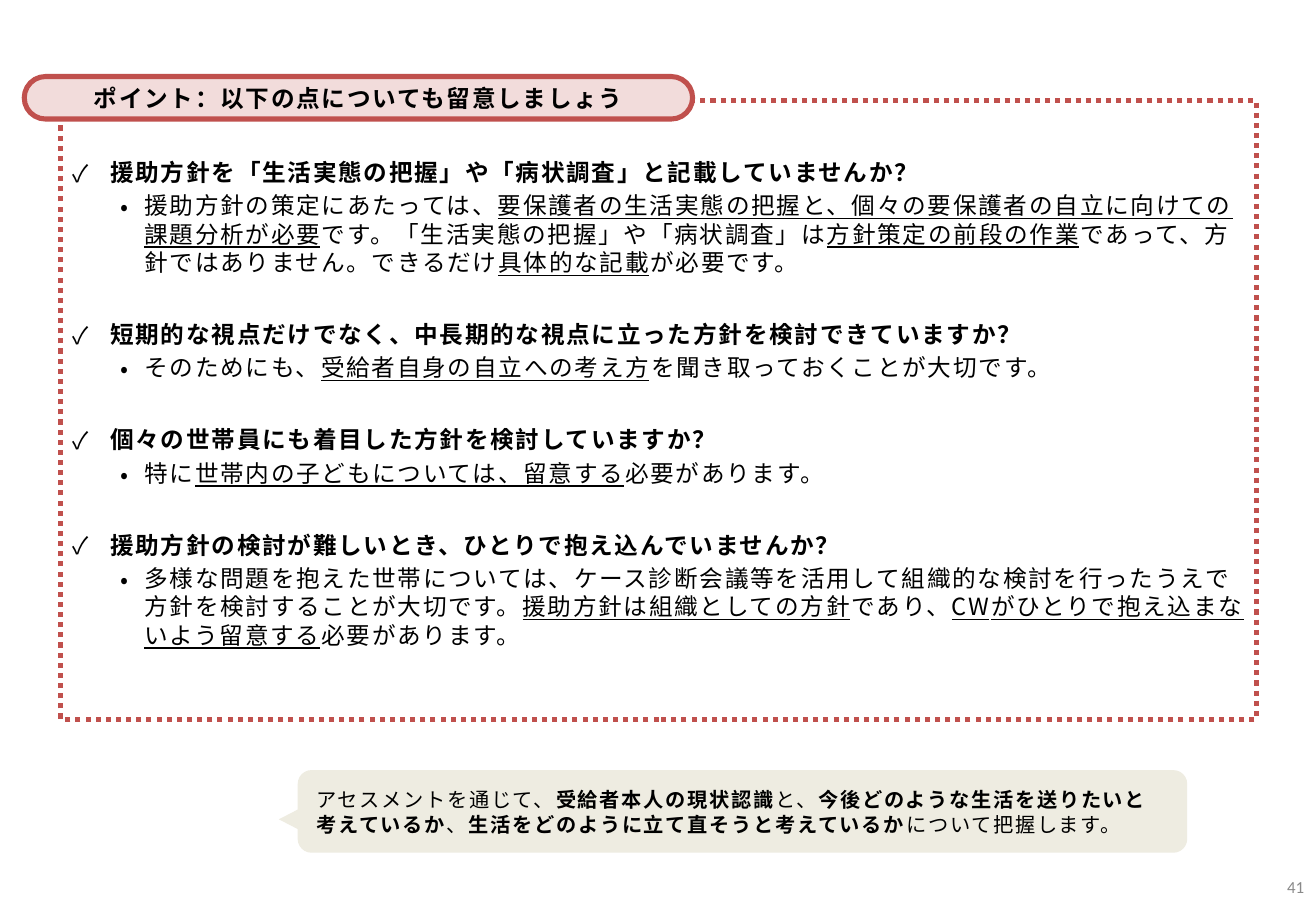
from dataclasses import dataclass

from lxml import etree
from pptx import Presentation
from pptx.dml.color import RGBColor
from pptx.enum.dml import MSO_LINE
from pptx.enum.shapes import MSO_SHAPE
from pptx.enum.text import MSO_ANCHOR, PP_ALIGN
from pptx.oxml.ns import qn
from pptx.util import Inches, Pt

RECT, ROUND, TRIANGLE = MSO_SHAPE.RECTANGLE, MSO_SHAPE.ROUNDED_RECTANGLE, MSO_SHAPE.ISOSCELES_TRIANGLE
LEFT, CENTER, RIGHT = PP_ALIGN.LEFT, PP_ALIGN.CENTER, PP_ALIGN.RIGHT
TOP, MIDDLE = MSO_ANCHOR.TOP, MSO_ANCHOR.MIDDLE
DOTTED = MSO_LINE.ROUND_DOT  # sysDot

COLORS = {"text": "000000", "red": "C0504D", "pink": "F2DCDB", "beige": "EEECE1", "gray": "898989"}
JP_FONT = "Noto Sans CJK JP"
LINE_PITCH = 16.8
POINT_GAP = LINE_PITCH + 9


@dataclass
class Point:
    question: str
    advice: str  # *marked* parts are underlined


@dataclass
class Bullet:
    char: str
    margin: float
    hanging: float


CHECK = Bullet("✓", 0.31, 0.31)
DOT = Bullet("•", 0.59, 0.2)

POINTS = [
    Point("援助方針を「生活実態の把握」や「病状調査」と記載していませんか？",
          "援助方針の策定にあたっては、*要保護者の生活実態の把握と、個々の要保護者の自立に向けての課題分析が必要*"
          "です。「生活実態の把握」や「病状調査」は*方針策定の前段の作業*であって、方針ではありません。"
          "できるだけ*具体的な記載*が必要です。"),
    Point("短期的な視点だけでなく、中長期的な視点に立った方針を検討できていますか？",
          "そのためにも、*受給者自身の自立への考え方*を聞き取っておくことが大切です。"),
    Point("個々の世帯員にも着目した方針を検討していますか？",
          "特に*世帯内の子どもについては、留意する*必要があります。"),
    Point("援助方針の検討が難しいとき、ひとりで抱え込んでいませんか？",
          "多様な問題を抱えた世帯については、ケース診断会議等を活用して組織的な検討を行ったうえで"
          "方針を検討することが大切です。*援助方針は組織としての方針*であり、"
          "*CWがひとりで抱え込まないよう留意する*必要があります。"),
]
ASSESSMENT = ("アセスメントを通じて、*受給者本人の現状認識*と、*今後どのような生活を送りたいと\n"
              "考えているか*、*生活をどのように立て直そうと考えているか*について把握します。")


def add_text(p, text: str, *, size: float = 14, color: str = "text", font: str = JP_FONT,
             bold: bool = False, mark: str = "bold", spacing: float = 1, align=LEFT,
             before: float = 0, pitch: float | None = None, bullet: Bullet | None = None) -> None:
    """Fill a paragraph; parts between asterisks get the mark format."""
    p.alignment = align
    p.space_before = Pt(before)
    if pitch:
        p.line_spacing = Pt(pitch)
    if bullet:
        pPr = p._p.get_or_add_pPr()
        pPr.set("marL", str(Inches(bullet.margin)))
        pPr.set("indent", str(-Inches(bullet.hanging)))
        etree.SubElement(pPr, qn("a:buFont")).set("typeface", font)
        etree.SubElement(pPr, qn("a:buChar")).set("char", bullet.char)
    for i, part in enumerate(text.split("*")):
        for j, line in enumerate(part.split("\n")):
            if j:
                p.add_line_break()
            r = p.add_run()
            r.text = line
            r.font.size = Pt(size)
            r.font.name = font
            r.font.color.rgb = RGBColor.from_string(COLORS[color])
            r.font.bold = bold
            if i % 2:
                setattr(r.font, mark, True)
            rPr = r._r.get_or_add_rPr()
            rPr.set("spc", str(int(spacing * 100)))
            etree.SubElement(rPr, qn("a:ea")).set("typeface", font)


def add_box(s, kind, x: float, y: float, w: float, h: float, *,
            fill: str | None = None, line: str | None = None):
    sp = s.shapes.add_shape(kind, Inches(x), Inches(y), Inches(w), Inches(h))
    sp.shadow.inherit = False
    if fill:
        sp.fill.solid()
        sp.fill.fore_color.rgb = RGBColor.from_string(COLORS[fill])
    else:
        sp.fill.background()
    if line:
        sp.line.color.rgb = RGBColor.from_string(COLORS[line])
        sp.line.width = Pt(3)
    else:
        sp.line.fill.background()
    return sp


def set_frame(sp, anchor, side: float = 0.1, edge: float = 0.05):
    tf = sp.text_frame
    tf.word_wrap = True
    tf.vertical_anchor = anchor
    tf.margin_left = tf.margin_right = Inches(side)
    tf.margin_top = tf.margin_bottom = Inches(edge)
    return tf


def add_textbox(s, x: float, y: float, w: float, h: float, anchor):
    return set_frame(s.shapes.add_textbox(Inches(x), Inches(y), Inches(w), Inches(h)), anchor)


def main() -> None:
    prs = Presentation()
    prs.slide_width, prs.slide_height = Inches(10.83), Inches(7.5)
    s = prs.slides.add_slide(prs.slide_layouts[6])

    # Page number
    tf = add_textbox(s, 10.32, 7.1, 0.51, 0.4, MIDDLE)
    add_text(tf.paragraphs[0], "41", size=10, color="gray", font="Calibri", spacing=0, align=RIGHT)

    # Assessment callout
    add_box(s, TRIANGLE, 2.29, 6.59, 0.32, 0.31, fill="beige").rotation = 270
    callout = add_box(s, ROUND, 2.45, 6.34, 7.32, 0.68, fill="beige")
    tf = set_frame(callout, MIDDLE, 0.12, 0.12)
    add_text(tf.paragraphs[0], ASSESSMENT, size=12, pitch=14.8)

    # Points to check
    tf = add_textbox(s, 0.5, 1.25, 9.84, 4.04, TOP)
    for i, point in enumerate(POINTS):
        p = tf.add_paragraph() if i else tf.paragraphs[0]
        add_text(p, point.question, bold=True, bullet=CHECK, pitch=LINE_PITCH,
                 before=POINT_GAP if i else 0)
        add_text(tf.add_paragraph(), point.advice, mark="underline", bullet=DOT,
                 pitch=LINE_PITCH, before=3)

    # Dotted frame and heading
    add_box(s, RECT, 0.5, 0.83, 9.84, 5.09, line="red").line.dash_style = DOTTED
    heading = add_box(s, ROUND, 0.2, 0.63, 5.5, 0.35, fill="pink", line="red")
    heading.adjustments[0] = 0.5
    tf = set_frame(heading, MIDDLE, 0.08, 0.12)
    add_text(tf.paragraphs[0], "ポイント：以下の点についても留意しましょう", bold=True, align=CENTER)

    prs.save("out.pptx")


if __name__ == "__main__":
    main()
